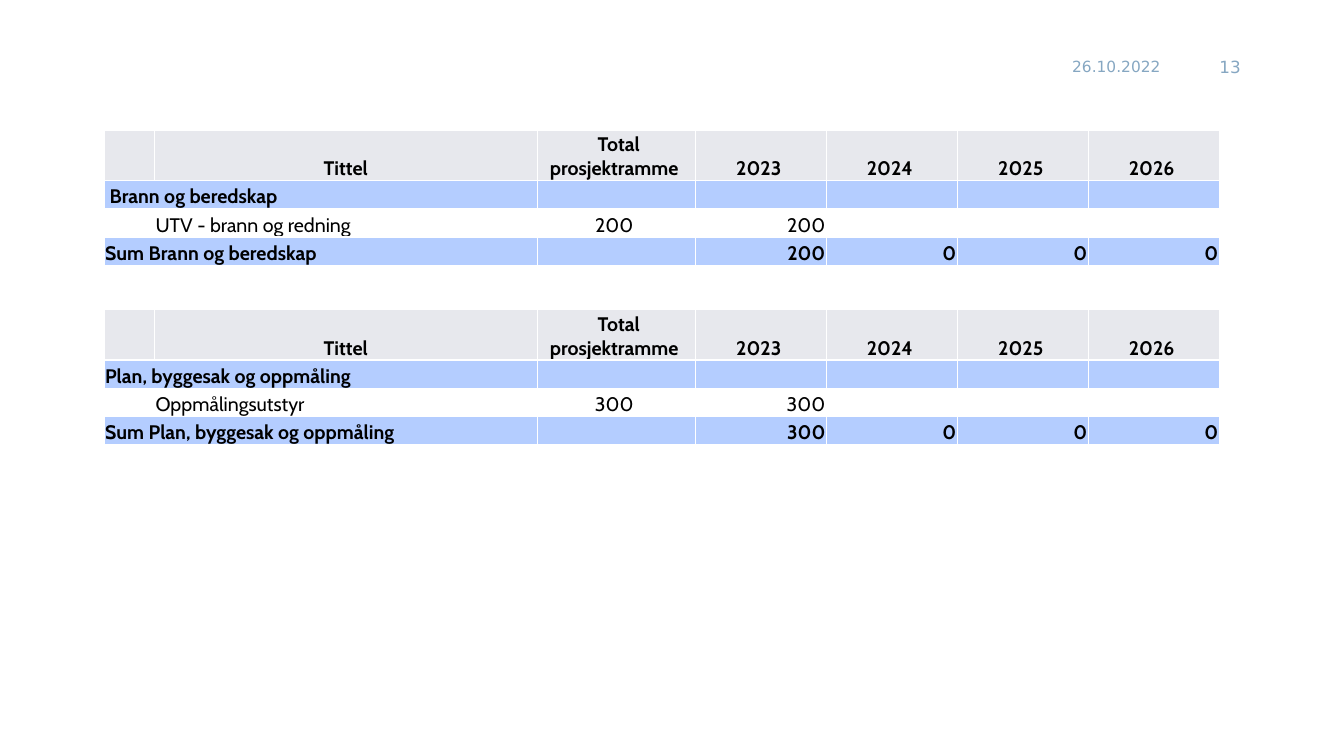
from lxml.etree import SubElement
from pptx import Presentation
from pptx.dml.color import RGBColor
from pptx.enum.text import MSO_ANCHOR, PP_ALIGN
from pptx.oxml.ns import qn
from pptx.util import Cm, Pt

HEADER_FILL = "E7E8ED"
BAND_FILL = "B4CDFF"
COLUMN_WIDTHS = [1.27, 9.65, 3.99, 3.3, 3.3, 3.3, 3.3]
ROW_HEIGHTS = [1.27, 0.71, 0.71, 0.71]
ROW_FILLS = [HEADER_FILL, BAND_FILL, None, BAND_FILL]


def color(value):
    return RGBColor.from_string(value)


def add_white_borders(cell):
    properties = cell._tc.get_or_add_tcPr()
    for side in ("lnL", "lnR", "lnT", "lnB"):
        line = SubElement(properties, qn(f"a:{side}"), w=str(Pt(1)))
        fill = SubElement(line, qn("a:solidFill"))
        SubElement(fill, qn("a:srgbClr"), val="FFFFFF")


presentation = Presentation()
presentation.slide_width = Cm(33.87)
presentation.slide_height = Cm(19.05)
slide = presentation.slides.add_slide(presentation.slide_layouts[6])

# Date and slide number
for text, left, width, size, alignment in [
    ("26.10.2022", 26.77, 2.92, 11, PP_ALIGN.LEFT),
    ("13", 30.07, 1.45, 12, PP_ALIGN.RIGHT),
]:
    shape = slide.shapes.add_textbox(Cm(left), Cm(1.17), Cm(width), Cm(1.02))
    shape.text_frame.word_wrap = True
    shape.text_frame.vertical_anchor = MSO_ANCHOR.MIDDLE
    shape.text_frame.text = text
    paragraph = shape.text_frame.paragraphs[0]
    paragraph.alignment = alignment
    font = paragraph.runs[0].font
    font.name, font.size = "DejaVu Sans", Pt(size)
    font.color.rgb = color("86A7C2")

# Budget tables: heading, project, amount and sum label
for top, heading, project, amount, total in [
    (3.28, " Brann og beredskap", "UTV - brann og redning", "200", "Sum Brann og beredskap"),
    (7.8, "Plan, byggesak og oppmåling", "Oppmålingsutstyr", "300",
     "Sum Plan, byggesak og oppmåling"),
]:
    rows = [
        ["", "Tittel", " Total prosjektramme ", "2023 ", "2024 ", "2025 ", "2026 "],
        [heading, "", "", "", "", "", ""],
        ["", project, amount + " ", amount, "", "", ""],
        [total, "", "", amount, "0", "0", "0"],
    ]
    table = slide.shapes.add_table(
        len(rows), len(COLUMN_WIDTHS), Cm(2.62), Cm(top),
        Cm(sum(COLUMN_WIDTHS)), Cm(sum(ROW_HEIGHTS))).table
    table.first_row = False
    table.horz_banding = False
    for column, width in zip(table.columns, COLUMN_WIDTHS):
        column.width = Cm(width)
    for row, height in zip(table.rows, ROW_HEIGHTS):
        row.height = Cm(height)

    # Headings and sums span the first two columns
    for row_index in (1, 3):
        table.cell(row_index, 0).merge(table.cell(row_index, 1))

    for row_index, texts in enumerate(rows):
        for column_index, text in enumerate(texts):
            cell = table.cell(row_index, column_index)
            add_white_borders(cell)
            if ROW_FILLS[row_index]:
                cell.fill.solid()
                cell.fill.fore_color.rgb = color(ROW_FILLS[row_index])
            else:
                cell.fill.background()
            cell.margin_left = cell.margin_right = cell.margin_top = Cm(0.03)
            cell.margin_bottom = 0
            cell.vertical_anchor = MSO_ANCHOR.BOTTOM
            paragraph = cell.text_frame.paragraphs[0]
            if not text:
                # Keep empty cells from stretching the row
                SubElement(paragraph._p, qn("a:endParaRPr"), sz="1400")
                continue
            paragraph.text = text
            if row_index == 0 or column_index == 2:
                paragraph.alignment = PP_ALIGN.CENTER
            elif column_index > 2:
                paragraph.alignment = PP_ALIGN.RIGHT
            else:
                paragraph.alignment = PP_ALIGN.LEFT
            font = paragraph.runs[0].font
            font.name, font.size = "Cabin", Pt(14)
            font.bold = row_index != 2
            font.color.rgb = color("000000")

presentation.save("out.pptx")
